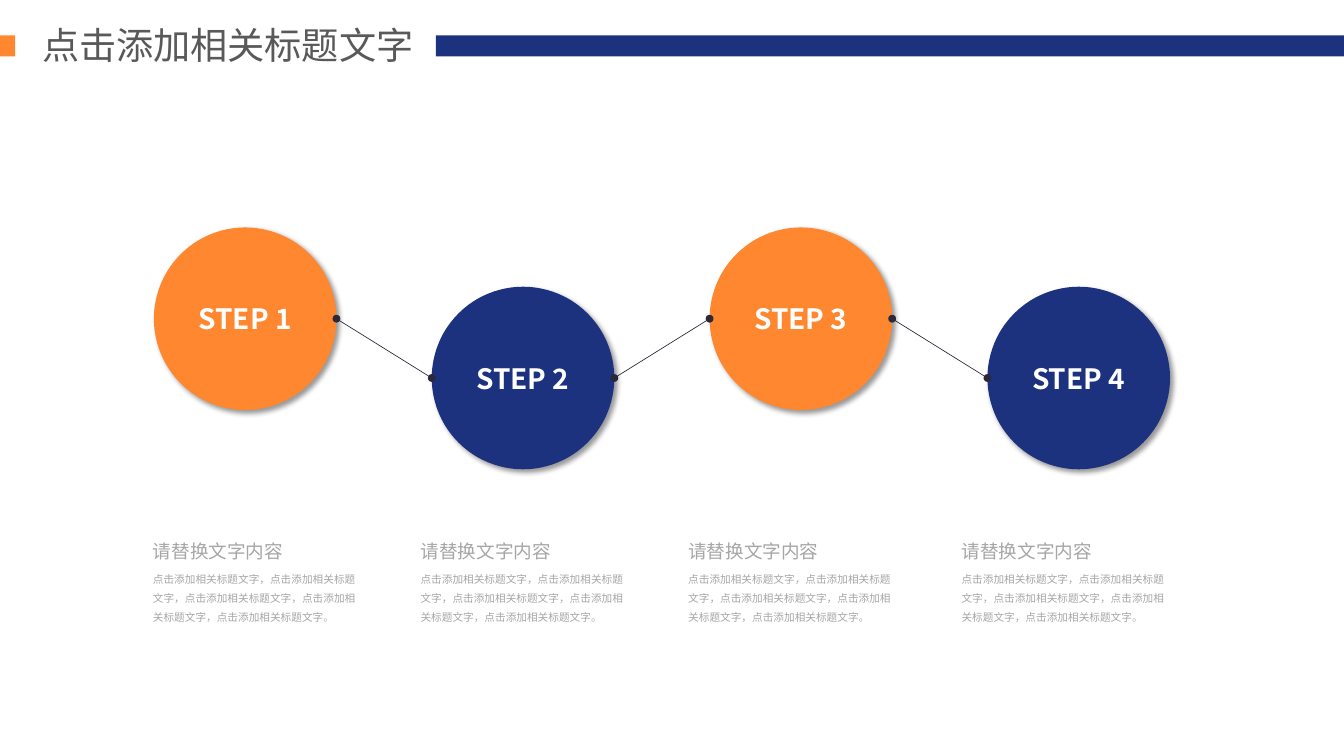
from lxml.etree import SubElement
from pptx import Presentation
from pptx.dml.color import RGBColor
from pptx.enum.shapes import MSO_CONNECTOR as LINK, MSO_SHAPE as SHAPE
from pptx.enum.text import MSO_ANCHOR as ANCHOR, MSO_AUTO_SIZE as FIT, PP_ALIGN as ALIGN
from pptx.oxml.ns import qn
from pptx.util import Inches, Pt

ORANGE = RGBColor(0xFF, 0x87, 0x2F)
NAVY = RGBColor(0x1C, 0x32, 0x7F)
INK = RGBColor(0x2B, 0x29, 0x39)
DARK = RGBColor(0x59, 0x59, 0x59)
GRAY = RGBColor(0xA6, 0xA6, 0xA6)
WHITE = RGBColor(0xFF, 0xFF, 0xFF)
SANS = "Noto Sans CJK SC"

TITLE = "点击添加相关标题文字"
HEAD = "请替换文字内容"
BODY = "，".join([TITLE] * 5) + "。"

SIZE = 1.91
FIRST, LAST = 1.61, 10.33
TOPS = (2.38, 3)
NOTES = (1.49, 4.29, 7.09, 9.95)


def box(*sizes):
    """Turn numbers into lengths in inches."""
    return [Inches(size) for size in sizes]


def style(para, size, color, face=SANS, bold=False):
    """Set the font of a paragraph for Latin and Chinese text."""
    font = para.font
    font.size, font.bold, font.name = Pt(size), bold, face
    font.color.rgb = color
    SubElement(font._element, qn("a:ea"), typeface=face)


def add_form(slide, kind, place, color):
    """Add a plain filled shape."""
    form = slide.shapes.add_shape(kind, *box(*place))
    form.shadow.inherit = False
    form.fill.solid()
    form.fill.fore_color.rgb = color
    form.line.fill.background()
    return form


def add_shade(form):
    """Give a shape a soft shadow to the lower right."""
    effects = form._element.spPr.find(qn("a:effectLst"))
    shade = SubElement(effects, qn("a:outerShdw"), blurRad=str(Pt(4)),
                       dist=str(Pt(3)), dir="2700000", algn="tl", rotWithShape="0")
    black = SubElement(shade, qn("a:srgbClr"), val="000000")
    SubElement(black, qn("a:alpha"), val="40000")


def add_step(slide, text, left, top, color):
    """Add a step circle with its label."""
    form = add_form(slide, SHAPE.OVAL, (left, top, SIZE, SIZE), color)
    add_shade(form)
    frame = form.text_frame
    frame.vertical_anchor = ANCHOR.MIDDLE
    frame.text = text
    para = frame.paragraphs[0]
    para.alignment = ALIGN.CENTER
    style(para, 21.1, WHITE, bold=True)


def add_link(slide, start, end):
    """Add a thin line with a dot at each end."""
    link = slide.shapes.add_connector(LINK.STRAIGHT, *box(*start, *end))
    link.line.color.rgb = INK
    link.line.width = Pt(0.5)
    line = link.line._get_or_add_ln()
    for tag in ("a:headEnd", "a:tailEnd"):
        SubElement(line, qn(tag), type="oval")
    SubElement(link._element.spPr, qn("a:effectLst"))


def add_text(slide, text, place, size, space, face):
    """Add a wrapped gray text box."""
    frame = slide.shapes.add_textbox(*box(*place)).text_frame
    frame.word_wrap = True
    frame.auto_size = FIT.SHAPE_TO_FIT_TEXT
    frame.margin_left = frame.margin_right = Inches(0.11)
    frame.text = text
    para = frame.paragraphs[0]
    para.line_spacing = space
    style(para, size, GRAY, face)


def set_title(slide):
    """Place and format the slide title."""
    title = slide.shapes.title
    title.left, title.top, title.width, title.height = box(0.34, 0.18, 4.13, 0.57)
    frame = title.text_frame
    frame.text = TITLE
    frame.word_wrap = False
    frame.auto_size = FIT.NONE
    frame.vertical_anchor = ANCHOR.MIDDLE
    para = frame.paragraphs[0]
    para.alignment = ALIGN.LEFT
    style(para, 28, DARK)


def main():
    """Build the slide and save it."""
    deck = Presentation()
    deck.slide_width, deck.slide_height = box(14.06, 7.91)
    slide = deck.slides.add_slide(deck.slide_layouts[5])
    add_form(slide, SHAPE.RECTANGLE, (4.56, 0.37, 9.5, 0.22), NAVY)
    add_form(slide, SHAPE.RECTANGLE, (0, 0.37, 0.16, 0.22), ORANGE)
    set_title(slide)

    pitch = (LAST - FIRST) / 3
    spots = [(FIRST + pitch * i, TOPS[i % 2]) for i in range(4)]
    for i, (left, top) in enumerate(spots):
        add_step(slide, f"STEP {i + 1}", left, top, (ORANGE, NAVY)[i % 2])
    for (left, top), (right, low) in zip(spots, spots[1:]):
        add_link(slide, (left + SIZE, top + SIZE / 2), (right, low + SIZE / 2))

    for left in NOTES:
        add_text(slide, HEAD, (left, 5.55, 2.66, 0.39), 14, 1.2, "Arial")
        add_text(slide, BODY, (left, 5.88, 2.44, 0.71), 8, 1.5, SANS)
    deck.save("out.pptx")


if __name__ == "__main__":
    main()
